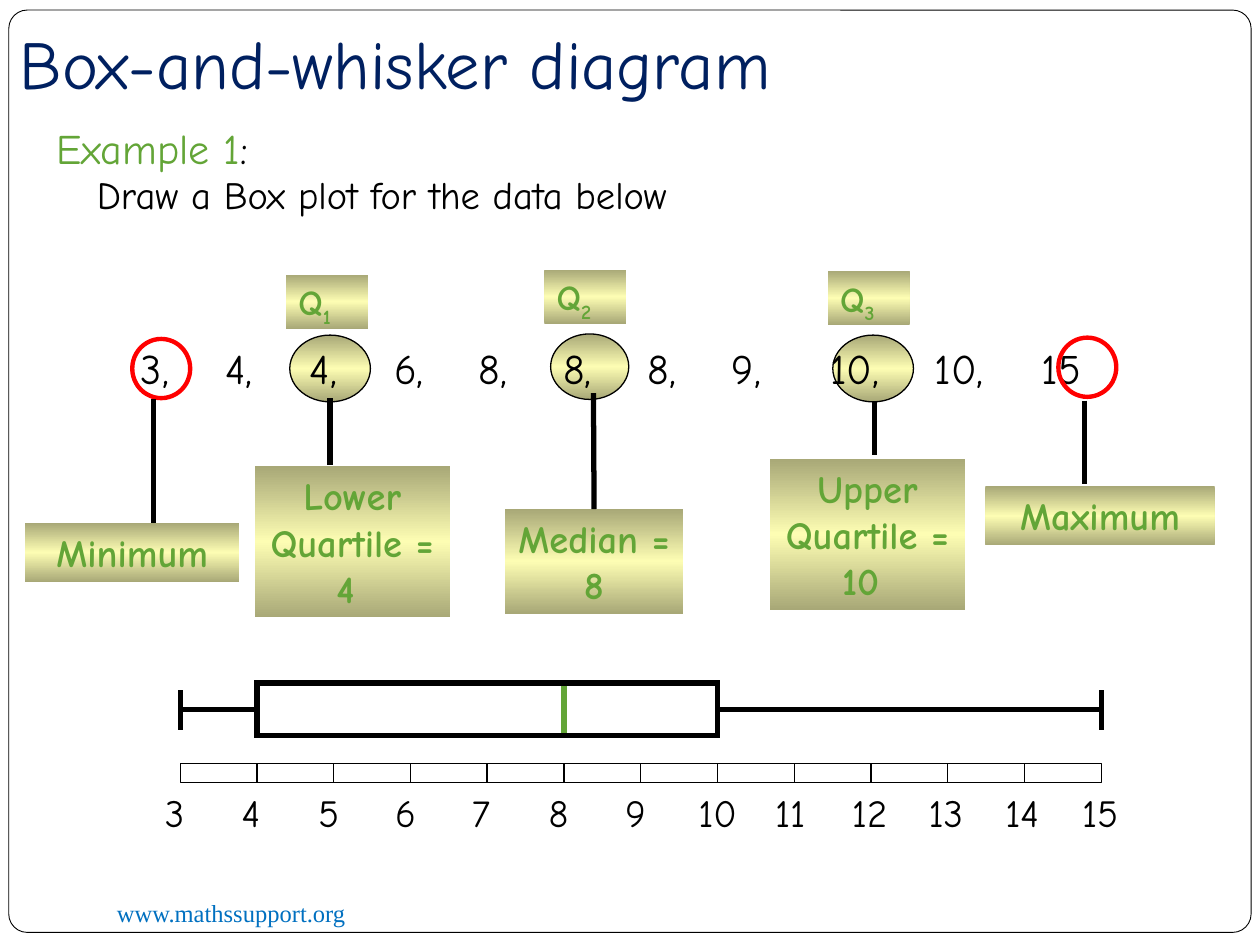
from copy import deepcopy
from dataclasses import dataclass

from lxml.etree import SubElement
from pptx import Presentation
from pptx.dml.color import RGBColor as Color
from pptx.enum.shapes import MSO_CONNECTOR as Connector, MSO_SHAPE as Shape
from pptx.enum.text import MSO_ANCHOR as Anchor, MSO_AUTO_SIZE as AutoSize, PP_ALIGN as Align
from pptx.oxml.ns import qn
from pptx.util import Inches, Pt


@dataclass(frozen=True)
class Theme:
    """Fonts, colours and type sizes of the slide."""
    font: str = "Comic Neue"
    link_font: str = "Times New Roman"
    black: str = "000000"
    white: str = "FFFFFF"
    navy: str = "002060"
    green: str = "63A537"
    blue: str = "0070C0"
    red: str = "FF0000"
    gold: tuple = ("A8A877", "FDFDB3", "A8A877")
    title: int = 39
    large: int = 24
    body: int = 22
    small: int = 20
    link: int = 14


THEME = Theme()
TITLE = "Box-and-whisker diagram"
EXAMPLE = [("Example 1", THEME.green), (":", THEME.black)]
TASK = "Draw a Box plot for the data below"
LINK = "www.mathssupport.org"
DATA = ["3,", "4,", "4,", "6,", "8,", "8,", "8,", "9,", "10,", "10,", "15"]
DATA_TABS = [0.67 * step for step in range(1, 8)] + [5.47, 6.3, 7.15]

QUARTILES = [
    {"circle": (6.61, 2.66, 0.64, 0.53), "tag": (6.57, 2.15), "index": "3",
     "label": "Upper Quartile = 10 ", "box": (6.11, 3.64, 1.55, 1.2), "stem": (6.94, 3.18, 3.61)},
    {"circle": (2.3, 2.66, 0.64, 0.53), "tag": (2.27, 2.18), "index": "1",
     "label": "Lower Quartile = 4 ", "box": (2.02, 3.7, 1.55, 1.2), "stem": (2.62, 3.16, 3.69)},
    {"circle": (4.37, 2.65, 0.62, 0.52), "tag": (4.32, 2.14), "index": "2",
     "label": "Median = 8", "box": (4.01, 4.04, 1.41, 0.83), "stem": (4.71, 3.12, 4.04)},
]
EXTREMES = [
    {"ring": (1.05, 2.69), "label": "Minimum", "box": (0.2, 4.15, 1.7, 0.47), "stem": (1.22, 3.17, 4.15)},
    {"ring": (8.4, 2.68), "label": "Maximum", "box": (7.82, 3.86, 1.82, 0.47), "stem": (8.61, 3.18, 3.84)},
]

LOW, Q1, MEDIAN, Q3, HIGH = 3, 4, 8, 10, 15
AXIS_LEFT, AXIS_TOP, TICK_HEIGHT = 1.43, 6.06, 0.15
PITCH = 7.31 / (HIGH - LOW)
BOX_TOP, BOX_BOTTOM, WHISKER_Y = 5.42, 5.84, 5.63
CAP_TOP, CAP_BOTTOM = 5.48, 5.79


def axis_x(value):
    """Return the horizontal place of a value on the number line."""
    return AXIS_LEFT + PITCH * (value - LOW)


def style(font, size, color, bold=None, name=THEME.font):
    """Set typeface, size, colour and weight of a font."""
    font.name, font.size, font.bold = name, Pt(size), bold
    font.color.rgb = Color.from_string(color)


def add_text(page, place, text, size, color=THEME.black, name=THEME.font):
    """Add a one-paragraph text box and return it."""
    box = page.shapes.add_textbox(*map(Inches, place))
    box.text_frame.word_wrap = True
    para = box.text_frame.paragraphs[0]
    para.text = text
    style(para.font, size, color, name=name)
    return box


def add_form(page, kind, place, line=None, width=0.75, fill=None):
    """Add a preset shape with optional outline and solid fill."""
    form = page.shapes.add_shape(kind, *map(Inches, place))
    form.shadow.inherit = False
    if fill:
        form.fill.solid()
        form.fill.fore_color.rgb = Color.from_string(fill)
    else:
        form.fill.background()
    if line:
        form.line.color.rgb = Color.from_string(line)
        form.line.width = Pt(width)
    else:
        form.line.fill.background()
    return form


def gild(form):
    """Fill a shape with the three-stop gold gradient."""
    form.fill.gradient()
    form.fill.gradient_angle = 270
    stop_list = form._element.spPr.find(".//" + qn("a:gsLst"))
    stop_list.append(deepcopy(stop_list[0]))
    for stop, color, position in zip(form.fill.gradient_stops, THEME.gold, (0, 0.5, 1)):
        stop.color.rgb = Color.from_string(color)
        stop.position = position


def add_label(page, place, spans, size, align):
    """Add a gold rectangle with bold green text; later spans are subscripts."""
    box = add_form(page, Shape.RECTANGLE, place)
    gild(box)
    frame = box.text_frame
    frame.word_wrap, frame.vertical_anchor = True, Anchor.TOP
    frame.auto_size = AutoSize.SHAPE_TO_FIT_TEXT
    para = frame.paragraphs[0]
    para.alignment = align
    style(para.font, size, THEME.green, True)
    for order, text in enumerate(spans):
        span = para.add_run()
        span.text = text
        style(span.font, size, THEME.green, True)
        if order:
            span._r.get_or_add_rPr().set("baseline", "-25000")
    return box


def add_line(page, start, end, color=THEME.black):
    """Add a straight three-point line."""
    line = page.shapes.add_connector(Connector.STRAIGHT, *map(Inches, start + end))
    line.line.color.rgb = Color.from_string(color)
    line.line.width = Pt(3)
    SubElement(line._element.spPr, qn("a:effectLst"))
    return line


def add_stem(page, item):
    """Add a label box and the stem that leads to it."""
    x, top, bottom = item["stem"]
    box = add_label(page, item["box"], [item["label"]], THEME.body, Align.CENTER)
    stem = add_line(page, (x, top), (x, bottom))
    left, box_top, width, _ = item["box"]
    if abs(left + width / 2 - x) < 0.01 and bottom == box_top:
        stem.end_connect(box, 0)


def add_data(page):
    """Add the data row on tab stops."""
    box = add_text(page, (1.02, 2.67, 8.12, 0.5), "", THEME.large)
    para = box.text_frame.paragraphs[0]
    para.text = "\t".join(DATA)
    properties = para._p.get_or_add_pPr()
    tabs = SubElement(properties, qn("a:tabLst"))
    properties.insert(0, tabs)
    for place in DATA_TABS:
        SubElement(tabs, qn("a:tab"), pos=str(Inches(place)), algn="l")


def add_axis(page):
    """Add the number line with its cells and labels."""
    for value in range(LOW, HIGH):
        add_form(page, Shape.RECTANGLE, (axis_x(value), AXIS_TOP, PITCH, TICK_HEIGHT), THEME.black)
    for value in range(LOW, HIGH + 1):
        inset, width = (0.22, 0.42) if value < 10 else (0.25, 0.67)
        add_text(page, (axis_x(value) - inset, 6.21, width, 0.47), str(value), THEME.body)


def add_box_plot(page):
    """Add the whiskers, caps, box sides and median."""
    add_line(page, (axis_x(LOW), WHISKER_Y), (axis_x(Q1), WHISKER_Y))
    add_line(page, (axis_x(Q3), WHISKER_Y), (axis_x(HIGH), WHISKER_Y))
    add_line(page, (axis_x(MEDIAN), BOX_BOTTOM), (axis_x(MEDIAN), BOX_TOP), THEME.green)
    for value in (LOW, HIGH):
        add_line(page, (axis_x(value), CAP_TOP), (axis_x(value), CAP_BOTTOM))
    for value in (Q1, Q3):
        add_line(page, (axis_x(value), BOX_TOP), (axis_x(value), BOX_BOTTOM))
    for y in (BOX_TOP, BOX_BOTTOM):
        add_line(page, (axis_x(Q1) - 0.02, y), (axis_x(Q3) + 0.02, y))


def main():
    """Build the box-and-whisker slide."""
    deck = Presentation()
    deck.slide_width, deck.slide_height = Inches(10), Inches(7.5)
    page = deck.slides.add_slide(deck.slide_layouts[6])
    border = add_form(page, Shape.ROUNDED_RECTANGLE, (0.07, 0.08, 9.86, 7.32), THEME.black, 0.5, THEME.white)
    border.adjustments[0] = 0.02
    add_text(page, (0.83, 7.08, 3.25, 0.34), LINK, THEME.link, THEME.blue, THEME.link_font)
    for item in QUARTILES:
        gild(add_form(page, Shape.OVAL, item["circle"], THEME.black))
        add_stem(page, item)
        add_label(page, item["tag"] + (0.65, 0.43), ["Q", item["index"]], THEME.small, Align.LEFT)
    add_data(page)
    add_text(page, (0.67, 1.31, 9.02, 0.47), TASK, THEME.body)
    add_axis(page)
    title = add_text(page, (0.06, 0.12, 8.5, 0.74), TITLE, THEME.title, THEME.navy)
    title.text_frame.vertical_anchor = Anchor.MIDDLE
    example = add_text(page, (0.35, 0.92, 2.01, 0.5), "", THEME.large)
    example.text_frame.word_wrap = False
    for text, color in EXAMPLE:
        span = example.text_frame.paragraphs[0].add_run()
        span.text = text
        style(span.font, THEME.large, color)
    add_box_plot(page)
    for item in EXTREMES:
        add_form(page, Shape.OVAL, item["ring"] + (0.46, 0.47), THEME.red, 2.5)
        add_stem(page, item)
    deck.save("out.pptx")


if __name__ == "__main__":
    main()
